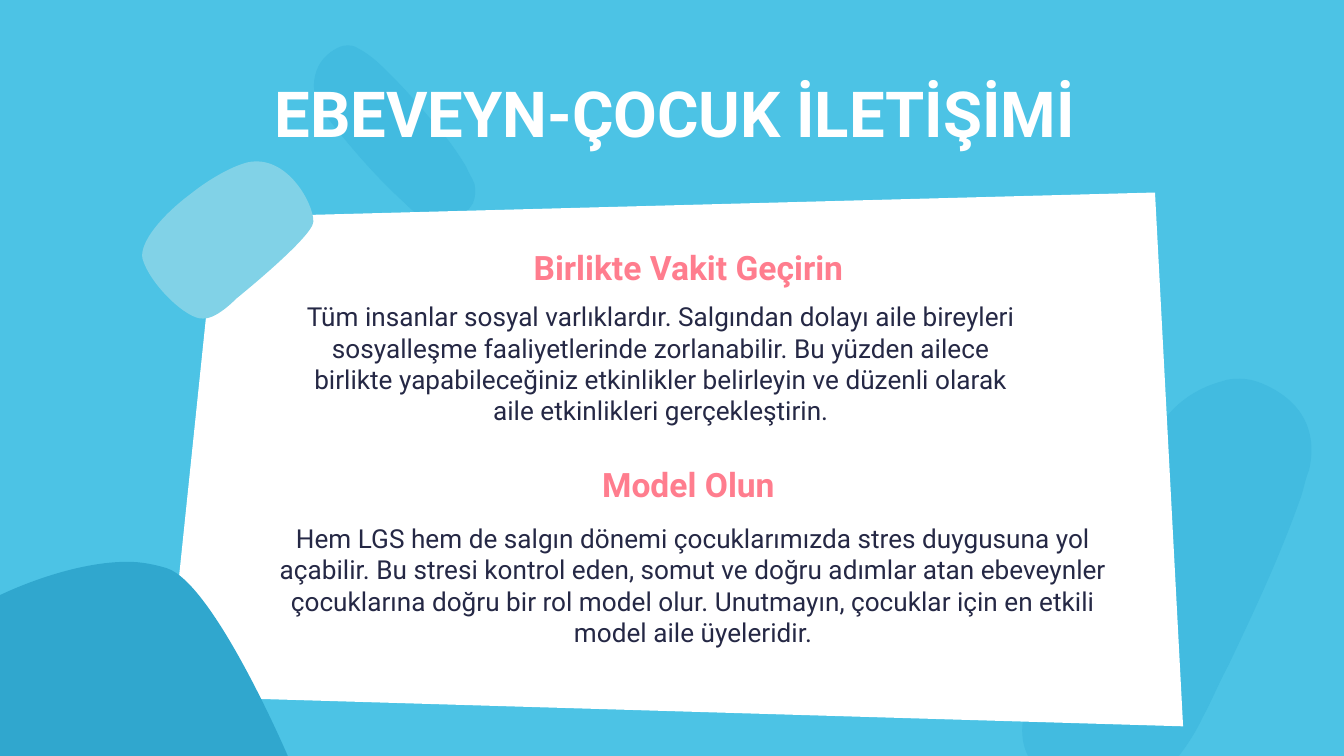
from dataclasses import dataclass
from math import cos, radians, sin

from lxml.etree import Element, SubElement
from pptx import Presentation
from pptx.dml.color import RGBColor
from pptx.enum.text import MSO_ANCHOR, MSO_AUTO_SIZE, PP_ALIGN
from pptx.oxml.ns import qn
from pptx.util import Cm, Pt

Point = tuple[float, float]
Segment = tuple[Point, ...]


@dataclass(frozen=True)
class Theme:
    font: str = "Roboto"
    sky: str = "4CC3E5"
    streak: str = "42BBE0"
    paper: str = "FFFFFF"
    hill: str = "30A7CE"
    tape: str = "81D2E7"
    title: str = "FFFFFF"
    heading: str = "FF7D8E"
    body: str = "252845"
    title_size: int = 34
    heading_size: int = 18
    body_size: int = 14


@dataclass(frozen=True)
class Outline:
    start: Point
    segments: tuple[Segment, ...]
    color: str
    rotation: float = 0


@dataclass(frozen=True)
class Passage:
    text: str
    left: float
    top: float
    width: float
    height: float
    size: int
    color: str
    bold: bool = False


THEME = Theme()

UPPER_STREAK = Outline((6.55, 0.86), (
    ((6.48, 0.86), (6.4, 0.89), (6.32, 0.94)),
    ((6.1, 1.07), (5.97, 1.27), (5.94, 1.52)),
    ((5.92, 1.63), (5.94, 1.78), (5.99, 1.93)),
    ((6.05, 2.01), (6.12, 2.11), (6.2, 2.24)),
    ((6.63, 2.79), (7.11, 3.35), (7.65, 3.84)),
    ((7.82, 4.01), (7.98, 4.14), (8.2, 4.24)),
    ((8.26, 4.27), (8.33, 4.29), (8.41, 4.29)),
    ((8.51, 4.29), (8.61, 4.24), (8.69, 4.17)),
    ((8.79, 4.06), (8.86, 3.96), (8.94, 3.84)),
    ((8.99, 3.71), (8.99, 3.61), (8.97, 3.48)),
    ((8.92, 3.35), (8.86, 3.28), (8.81, 3.15)),
    ((8.61, 2.82), (8.38, 2.51), (8.13, 2.24)),
    ((7.87, 1.93), (7.65, 1.68), (7.37, 1.4)),
    ((7.19, 1.22), (7.01, 1.04), (6.76, 0.91)),
    ((6.68, 0.86), (6.63, 0.86), (6.55, 0.86)),
), THEME.streak)

LOWER_STREAK = Outline((23.44, 7.16), (
    ((23.32, 7.16), (23.22, 7.16), (23.09, 7.21)),
    ((22.68, 7.32), (22.33, 7.54), (22.07, 7.85)),
    ((21.74, 8.18), (21.49, 8.56), (21.18, 9.02)),
    ((21.13, 9.12), (21.06, 9.25), (20.98, 9.42)),
    ((20.42, 10.46), (19.96, 11.56), (19.56, 12.65)),
    ((19.43, 12.95), (19.33, 13.28), (19.33, 13.64)),
    ((19.3, 13.87), (19.33, 14.1), (19.43, 14.29)),
    ((22.28, 14.29),),
    ((22.45, 14.07), (22.61, 13.82), (22.73, 13.56)),
    ((22.91, 13.23), (23.04, 12.9), (23.22, 12.57)),
    ((23.7, 11.56), (24.18, 10.54), (24.56, 9.47)),
    ((24.64, 9.27), (24.66, 9.07), (24.74, 8.89)),
    ((24.92, 8.1), (24.56, 7.54), (23.83, 7.24)),
    ((23.7, 7.19), (23.57, 7.16), (23.44, 7.16)),
), THEME.streak)

PAPER = Outline((21.83, 3.64), (
    ((4.09, 4.11),), ((3.15, 13.16),), ((22.36, 13.73),), ((21.83, 3.64),),
), THEME.paper)

HILL = Outline((2.41, 10.62), (
    ((1.27, 10.62), (0, 11.25), (0, 11.25)),
    ((0, 14.29),),
    ((5.44, 14.29),),
    ((5.44, 14.29), (4.04, 11.02), (3.15, 10.74)),
    ((2.92, 10.67), (2.67, 10.62), (2.41, 10.62)),
), THEME.hill)

TAPE = Outline((4.27, 5.82), (
    ((4.37, 5.74), (4.47, 5.64), (4.47, 5.64)),
    ((4.47, 5.64), (5.92, 4.47), (5.92, 4.19)),
    ((5.94, 3.89), (5.44, 2.9), (4.67, 3.07)),
    ((4.37, 3.15), (3.96, 3.38), (3.61, 3.66)),
    ((3.07, 4.06), (2.64, 4.57), (2.69, 4.88)),
    ((2.82, 5.36), (3.53, 6.05), (3.84, 6.02)),
    ((3.99, 6.02), (4.14, 5.92), (4.27, 5.82)),
), THEME.tape, 142.3)


def heading(text: str, top: float) -> Passage:
    return Passage(text, 9.49, top, 7.04, 1.27, THEME.heading_size, THEME.heading, True)


def body(text: str, left: float, top: float, width: float, height: float) -> Passage:
    return Passage(text, left, top, width, height, THEME.body_size, THEME.body)


PASSAGES = (
    Passage("EBEVEYN-ÇOCUK İLETİŞİMİ", 2.06, 1.15, 21.39, 1.88,
            THEME.title_size, THEME.title, True),
    heading("Birlikte Vakit Geçirin", 4.42),
    body("Tüm insanlar sosyal varlıklardır. Salgından dolayı aile bireyleri "
         "sosyalleşme faaliyetlerinde zorlanabilir. Bu yüzden ailece birlikte "
         "yapabileceğiniz etkinlikler belirleyin ve düzenli olarak aile "
         "etkinlikleri gerçekleştirin.", 5.25, 5.43, 14.48, 2.82),
    heading("Model Olun", 8.51),
    body("Hem LGS hem de salgın dönemi çocuklarımızda stres duygusuna yol "
         "açabilir. Bu stresi kontrol eden, somut ve doğru adımlar atan "
         "ebeveynler çocuklarına doğru bir rol model olur. Unutmayın, çocuklar "
         "için en etkili model aile üyeleridir.", 4.5, 9.62, 17.2, 3.12),
)


def turn(point: Point, degrees: float) -> Point:
    x, y = point
    angle = radians(degrees)
    return x * cos(angle) - y * sin(angle), x * sin(angle) + y * cos(angle)


def draw_outline(slide, outline: Outline) -> None:
    def place(point: Point) -> tuple[int, int]:
        x, y = turn(point, -outline.rotation)
        return Cm(x), Cm(y)

    builder = slide.shapes.build_freeform(*place(outline.start))
    builder.add_line_segments([place(segment[-1]) for segment in outline.segments])
    shape = builder.convert_to_shape()
    lines = list(shape._element.iter(qn("a:lnTo")))
    for line, segment in zip(lines, outline.segments):
        if len(segment) == 3:
            curve = Element(qn("a:cubicBezTo"))
            for x, y in map(place, segment):
                SubElement(curve, qn("a:pt"), x=str(x - shape.left), y=str(y - shape.top))
            line.getparent().replace(line, curve)
    center = shape.left + shape.width / 2, shape.top + shape.height / 2
    center_x, center_y = turn(center, outline.rotation)
    shape.left = round(center_x - shape.width / 2)
    shape.top = round(center_y - shape.height / 2)
    shape.rotation = outline.rotation
    shape.shadow.inherit = False
    shape.fill.solid()
    shape.fill.fore_color.rgb = RGBColor.from_string(outline.color)
    shape.line.fill.background()


def write_passage(slide, placeholder, passage: Passage) -> None:
    slide.shapes._spTree.append(placeholder._element)
    placeholder.left, placeholder.top = Cm(passage.left), Cm(passage.top)
    placeholder.width, placeholder.height = Cm(passage.width), Cm(passage.height)
    frame = placeholder.text_frame
    frame.text = passage.text
    frame.word_wrap = True
    frame.auto_size = MSO_AUTO_SIZE.NONE
    frame.vertical_anchor = MSO_ANCHOR.TOP
    frame.margin_left = frame.margin_right = Cm(0.25)
    frame.margin_top = frame.margin_bottom = Cm(0.25)
    paragraph = frame.paragraphs[0]
    paragraph.alignment = PP_ALIGN.CENTER
    paragraph.line_spacing = 1.0
    paragraph.space_before = paragraph.space_after = Pt(0)
    properties = paragraph._p.get_or_add_pPr()
    properties.set("marL", "0")
    properties.set("indent", "0")
    SubElement(properties, qn("a:buNone"))
    font = paragraph.font
    font.name = THEME.font
    font.size = Pt(passage.size)
    font.bold = passage.bold
    font.color.rgb = RGBColor.from_string(passage.color)


def main() -> None:
    presentation = Presentation()
    presentation.slide_width, presentation.slide_height = Cm(25.4), Cm(14.29)
    comparison_layout = presentation.slide_layouts[4]
    slide = presentation.slides.add_slide(comparison_layout)
    slide.background.fill.solid()
    slide.background.fill.fore_color.rgb = RGBColor.from_string(THEME.sky)
    for outline in (UPPER_STREAK, LOWER_STREAK, PAPER, HILL):
        draw_outline(slide, outline)
    for placeholder, passage in zip(list(slide.placeholders), PASSAGES):
        write_passage(slide, placeholder, passage)
    draw_outline(slide, TAPE)
    presentation.save("out.pptx")


if __name__ == "__main__":
    main()
